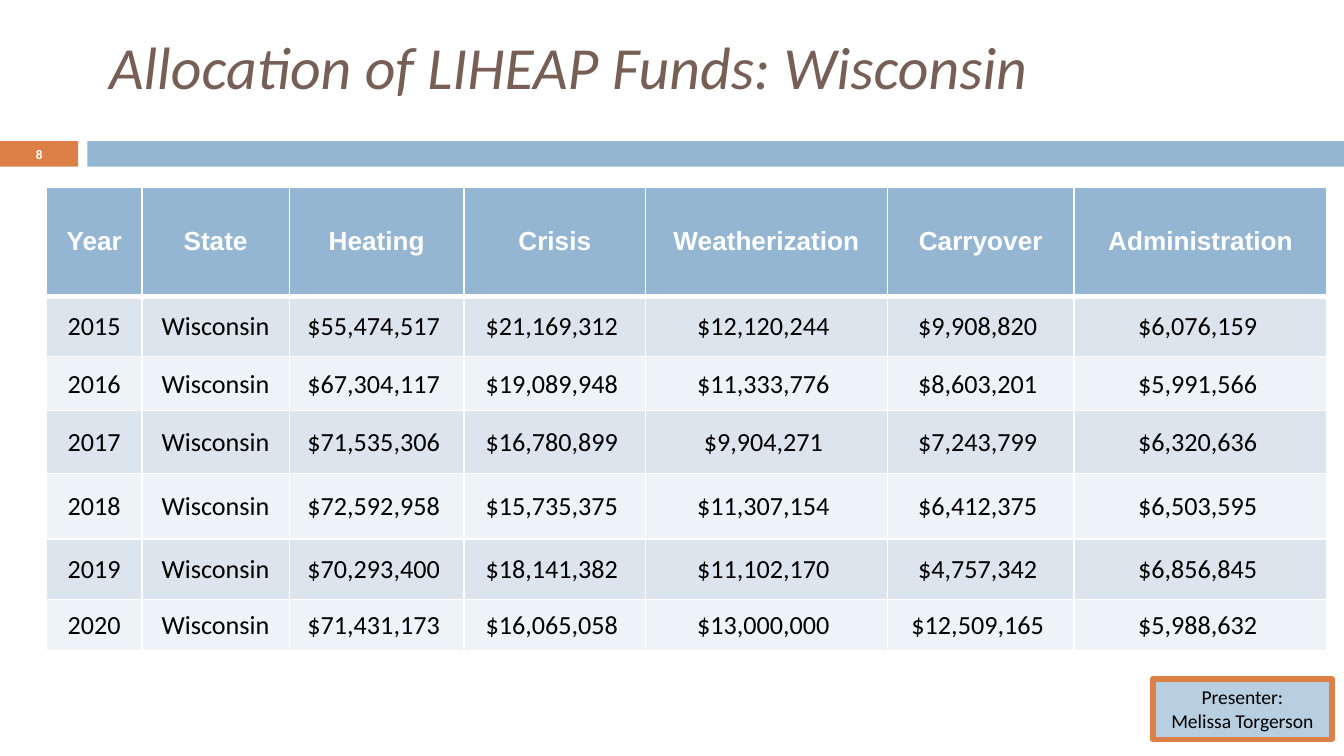
from dataclasses import dataclass

from lxml import etree
from pptx import Presentation
from pptx import util as u
from pptx.dml.color import RGBColor
from pptx.enum import shapes, text
from pptx.oxml import ns

Cm, Pt = u.Cm, u.Pt


@dataclass(frozen=True)
class Theme:
    """Colours, fonts and type sizes of the slide."""
    blue: str = "94B6D2"
    orange: str = "DD8047"
    brown: str = "775F55"
    white: str = "FFFFFF"
    black: str = "000000"
    bands: tuple = ("DCE5EE", "EEF3F7")
    body_font: str = "Calibri"
    header_font: str = "Arial"
    title_size: float = 32
    table_size: float = 14
    presenter_size: float = 10.5
    number_size: float = 7.1
    rule: float = 1
    heavy_rule: float = 3


THEME = Theme()
HEADINGS = ["Year", "State", "Heating", "Crisis", "Weatherization", "Carryover", "Administration"]
STATE = "Wisconsin"
FUNDS = {
    2015: (55474517, 21169312, 12120244, 9908820, 6076159),
    2016: (67304117, 19089948, 11333776, 8603201, 5991566),
    2017: (71535306, 16780899, 9904271, 7243799, 6320636),
    2018: (72592958, 15735375, 11307154, 6412375, 6503595),
    2019: (70293400, 18141382, 11102170, 4757342, 6856845),
    2020: (71431173, 16065058, 13000000, 12509165, 5988632),
}
COLUMN_WIDTHS = [1.8, 2.79, 3.3, 3.43, 4.57, 3.53, 4.78]
ROW_HEIGHTS = [2.06, 1.14, 1.02, 1.19, 1.24, 1.14, 0.97]


def colour(value):
    """Turn a hex value into a colour."""
    return RGBColor.from_string(value)


def add_run(paragraph, wording, size, ink, font=THEME.body_font, bold=False, italic=False):
    """Add one formatted run to a paragraph."""
    run = paragraph.add_run()
    run.text = wording
    run.font.name, run.font.size = font, Pt(size)
    run.font.bold, run.font.italic = bold, italic
    run.font.color.rgb = colour(ink)


def set_margins(target, left, top, right, bottom):
    """Set the four inner margins of a text frame or cell."""
    target.margin_left, target.margin_top = Cm(left), Cm(top)
    target.margin_right, target.margin_bottom = Cm(right), Cm(bottom)


def add_rectangle(slide, box, fill):
    """Add a plain filled rectangle without outline or shadow."""
    shape = slide.shapes.add_shape(shapes.MSO_SHAPE.RECTANGLE, *map(Cm, box))
    shape.shadow.inherit = False
    shape.fill.solid()
    shape.fill.fore_color.rgb = colour(fill)
    shape.line.fill.background()
    return shape


def place_title(slide, box, wording):
    """Move and format the title placeholder."""
    title = slide.shapes.title
    title.left, title.top, title.width, title.height = map(Cm, box)
    frame = title.text_frame
    frame.word_wrap = True
    frame.auto_size = text.MSO_AUTO_SIZE.NONE
    frame.vertical_anchor = text.MSO_ANCHOR.MIDDLE
    set_margins(frame, 0.74, 0, 0.25, 1.1)
    paragraph = frame.paragraphs[0]
    paragraph.alignment = text.PP_ALIGN.LEFT
    paragraph.line_spacing = 0.8
    add_run(paragraph, wording, THEME.title_size, THEME.brown, italic=True)


def place_band(slide, box, number):
    """Draw the numbered tab and the long bar beside it."""
    left, top, width, height = box
    tab_width, gap = 1.48, 0.17
    tab = add_rectangle(slide, (left, top, tab_width, height), THEME.orange)
    bar_left = tab_width + gap
    add_rectangle(slide, (left + bar_left, top, width - bar_left, height), THEME.blue)
    frame = tab.text_frame
    set_margins(frame, 0, 0, 0, 0)
    frame.vertical_anchor = text.MSO_ANCHOR.MIDDLE
    paragraph = frame.paragraphs[0]
    paragraph.alignment = text.PP_ALIGN.CENTER
    add_run(paragraph, number, THEME.number_size, THEME.white, bold=True)


def set_borders(cell, top, bottom):
    """Give a cell white borders with the given top and bottom widths."""
    properties = cell._tc.get_or_add_tcPr()
    widths = {"lnL": THEME.rule, "lnR": THEME.rule, "lnT": top, "lnB": bottom}
    for index, (side, width) in enumerate(widths.items()):
        line = etree.Element(ns.qn(f"a:{side}"), w=str(Pt(width)))
        fill = etree.SubElement(line, ns.qn("a:solidFill"))
        etree.SubElement(fill, ns.qn("a:srgbClr"), val=THEME.white)
        properties.insert(index, line)


def fill_cell(cell, wording, row):
    """Write and style one table cell according to its row."""
    header = row == 0
    cell.fill.solid()
    cell.fill.fore_color.rgb = colour(THEME.blue if header else THEME.bands[(row - 1) % 2])
    cell.vertical_anchor = text.MSO_ANCHOR.MIDDLE
    if not header:
        set_margins(cell, 0.02, 0.02, 0.02, 0)
    paragraph = cell.text_frame.paragraphs[0]
    paragraph.alignment = text.PP_ALIGN.CENTER
    add_run(paragraph, wording, THEME.table_size,
            THEME.white if header else THEME.black,
            THEME.header_font if header else THEME.body_font, bold=header)
    set_borders(cell, THEME.heavy_rule if row == 1 else THEME.rule,
                THEME.heavy_rule if header else THEME.rule)


def place_table(slide, box):
    """Build the table of yearly funds."""
    rows = [HEADINGS] + [
        [str(year), STATE] + [f"${amount:,} " for amount in amounts]
        for year, amounts in FUNDS.items()
    ]
    table = slide.shapes.add_table(len(rows), len(HEADINGS), *map(Cm, box)).table
    for column, width in zip(table.columns, COLUMN_WIDTHS):
        column.width = Cm(width)
    for row, height in zip(table.rows, ROW_HEIGHTS):
        row.height = Cm(height)
    for row, wordings in enumerate(rows):
        for column, wording in enumerate(wordings):
            fill_cell(table.cell(row, column), wording, row)


def place_presenter(slide, box, lines):
    """Draw the translucent presenter label."""
    label = add_rectangle(slide, box, THEME.blue)
    fill_colour = label.fill._xPr.find(".//" + ns.qn("a:srgbClr"))
    etree.SubElement(fill_colour, ns.qn("a:alpha"), val="66000")
    label.line.color.rgb = colour(THEME.orange)
    label.line.width = Pt(THEME.heavy_rule)
    frame = label.text_frame
    frame.word_wrap = True
    frame.auto_size = text.MSO_AUTO_SIZE.SHAPE_TO_FIT_TEXT
    frame.vertical_anchor = text.MSO_ANCHOR.TOP
    for index, wording in enumerate(lines):
        paragraph = frame.add_paragraph() if index else frame.paragraphs[0]
        paragraph.alignment = text.PP_ALIGN.CENTER
        add_run(paragraph, wording, THEME.presenter_size, THEME.black)


def main():
    """Build and save the presentation."""
    presentation = Presentation()
    presentation.slide_width, presentation.slide_height = Cm(25.4), Cm(14.29)
    slide = presentation.slides.add_slide(presentation.slide_layouts[5])
    place_title(slide, (1.32, 0.89, 25.93, 2.06), "Allocation of LIHEAP Funds: Wisconsin")
    place_band(slide, (0, 2.67, 25.4, 0.48), "8")
    place_presenter(slide, (21.79, 12.83, 3.38, 1.15), ["Presenter:", "Melissa Torgerson"])
    place_table(slide, (0.88, 3.54, sum(COLUMN_WIDTHS), sum(ROW_HEIGHTS)))
    presentation.save("out.pptx")


if __name__ == "__main__":
    main()
